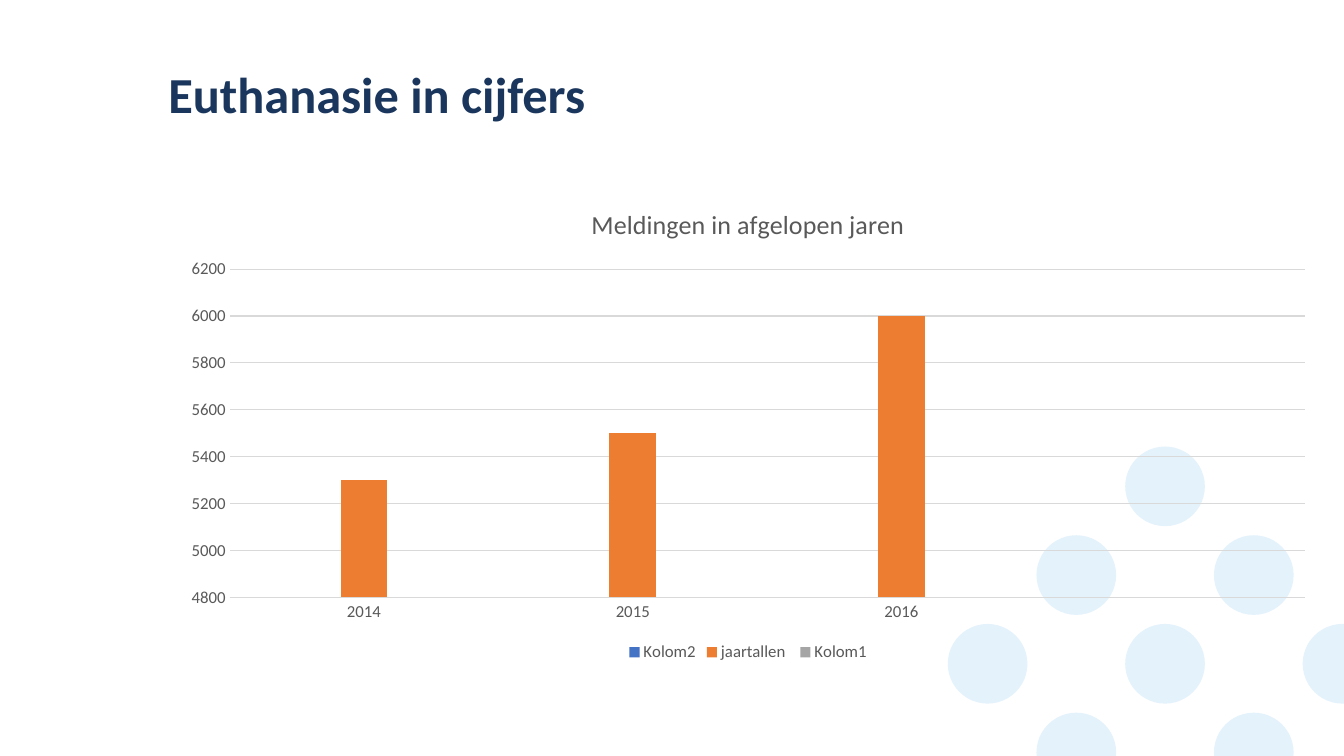
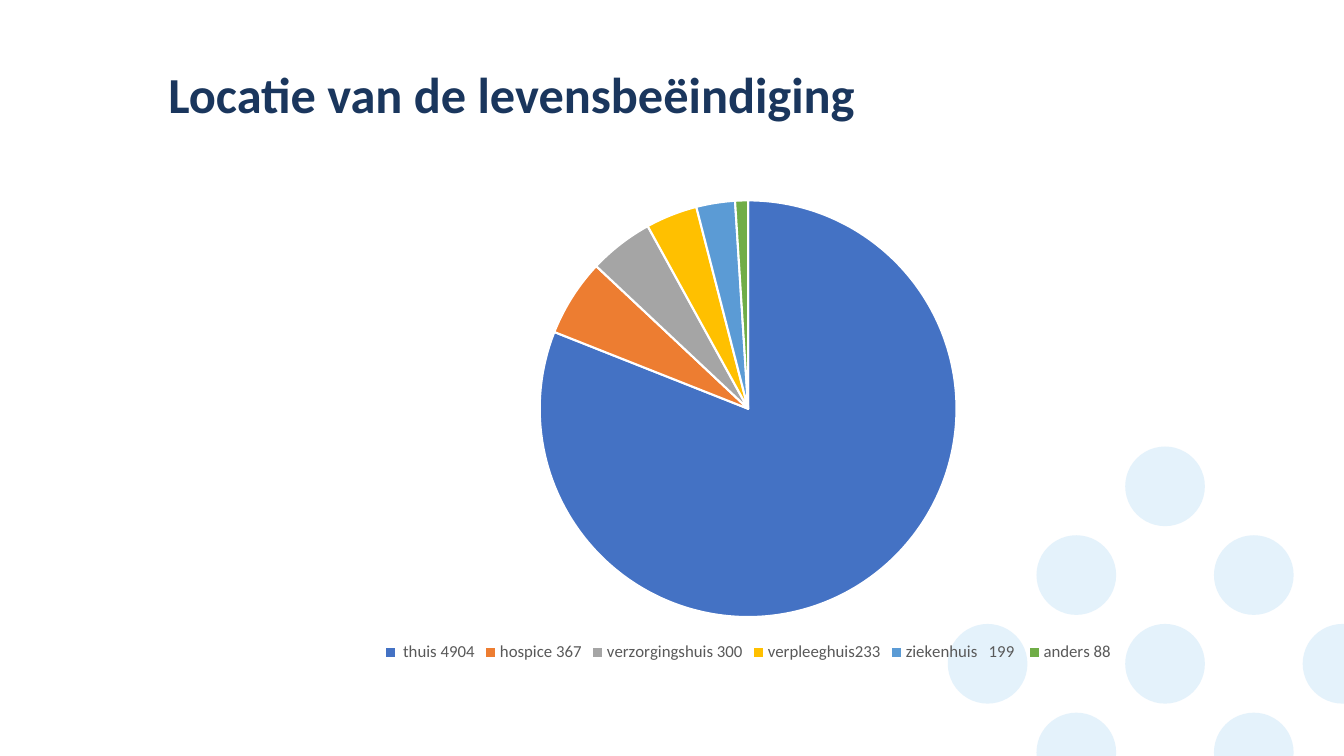
from dataclasses import dataclass
from itertools import product
from typing import Optional

from lxml.etree import SubElement
from pptx import Presentation
from pptx.chart.chart import Chart
from pptx.chart.data import CategoryChartData
from pptx.dml.color import RGBColor
from pptx.enum.chart import XL_CHART_TYPE, XL_LEGEND_POSITION, XL_TICK_MARK
from pptx.enum.shapes import MSO_SHAPE
from pptx.enum.text import MSO_ANCHOR, MSO_AUTO_SIZE, PP_ALIGN
from pptx.oxml.ns import qn
from pptx.slide import Slide, SlideLayout
from pptx.text.text import Font, TextFrame
from pptx.util import Inches, Pt

COLORS = {
    "title": "1A365D",
    "dot": "A8D5F4",
    "label": "595959",
    "grid": "D9D9D9",
    "white": "FFFFFF",
    "blue": "4472C4",
    "orange": "ED7D31",
    "gray": "A5A5A5",
    "yellow": "FFC000",
    "sky": "5B9BD5",
    "green": "70AD47",
}
PALETTE = ("blue", "orange", "gray", "yellow", "sky", "green")
FONT = "Calibri"


@dataclass(frozen=True)
class Box:
    left: float
    top: float
    width: float
    height: float

    def lengths(self) -> tuple:
        return tuple(Inches(value) for value in (self.left, self.top, self.width, self.height))


@dataclass(frozen=True)
class Series:
    name: str
    values: tuple


@dataclass(frozen=True)
class ChartSlide:
    title: str
    chart_type: XL_CHART_TYPE
    categories: tuple
    series: tuple
    chart_title: Optional[str] = None


TITLE_BOX = Box(1.67, 0.69, 11.5, 1.16)
CHART_BOX = Box(1.67, 1.85, 11.5, 4.76)

SLIDES = (
    ChartSlide(
        "Euthanasie in cijfers",
        XL_CHART_TYPE.COLUMN_CLUSTERED,
        ("2014", "2015", "2016", ""),
        (
            Series("Kolom2", (None,) * 4),
            Series("jaartallen ", (5300, 5500, 6000, None)),
            Series("Kolom1", (None,) * 4),
        ),
        "Meldingen in afgelopen jaren",
    ),
    ChartSlide(
        "Locatie van de levensbeëindiging",
        XL_CHART_TYPE.PIE,
        (
            " thuis 4904",
            "hospice 367",
            "verzorgingshuis 300",
            "verpleeghuis233",
            "ziekenhuis   199 ",
            "anders 88",
        ),
        (Series("Series 1", (81, 6, 5, 4, 3, 1)),),
    ),
)


def color(name: str) -> RGBColor:
    return RGBColor.from_string(COLORS[name])


def format_font(font: Font, *, size: float = 12, color_name: str = "label", bold: bool = False) -> None:
    font.name = FONT
    font.size = Pt(size)
    font.bold = bold
    font.color.rgb = color(color_name)


def write_text(frame: TextFrame, text: str, *, line_spacing: Optional[float] = None, **font_format) -> None:
    frame.text = text
    paragraph = frame.paragraphs[0]
    if line_spacing:
        paragraph.line_spacing = line_spacing
    format_font(paragraph.runs[0].font, **font_format)


def add_dots(slide: Slide, layout: SlideLayout) -> None:
    group = slide.shapes.add_group_shape()
    step, diameter = 0.88, Inches(0.79)
    for row, column in product(range(4), range(5)):
        if (row + column) % 2 or abs(column - 2) > row:
            continue
        left, top = Inches(9.4 + step * column), Inches(4.43 + step * row)
        dot = group.shapes.add_shape(MSO_SHAPE.OVAL, left, top, diameter, diameter)
        dot.shadow.inherit = False
        dot.fill.solid()
        dot.fill.fore_color.rgb = color("dot")
        dot.line.fill.background()
        fill_color = dot.element.spPr.find(f"{qn('a:solidFill')}/{qn('a:srgbClr')}")
        SubElement(fill_color, qn("a:alpha")).set("val", "30000")
    for number, properties in enumerate(group.element.iter(qn("p:cNvPr")), start=100):
        properties.set("id", str(number))
    layout.element.cSld.spTree.insert(2, group.element)


def add_title(slide: Slide, text: str) -> None:
    title = slide.shapes.title
    title.left, title.top, title.width, title.height = TITLE_BOX.lengths()
    frame = title.text_frame
    frame.margin_left = frame.margin_top = frame.margin_right = frame.margin_bottom = 0
    frame.vertical_anchor = MSO_ANCHOR.TOP
    frame.word_wrap = True
    frame.auto_size = MSO_AUTO_SIZE.NONE
    write_text(frame, text, line_spacing=0.9, size=36, color_name="title", bold=True)
    frame.paragraphs[0].alignment = PP_ALIGN.LEFT


def format_columns(chart: Chart) -> None:
    plot = chart.plots[0]
    plot.gap_width, plot.overlap = 219, -27
    plot.vary_by_categories = False
    for series, name in zip(plot.series, PALETTE):
        series.format.fill.solid()
        series.format.fill.fore_color.rgb = color(name)
    for axis in (chart.category_axis, chart.value_axis):
        axis.major_tick_mark = axis.minor_tick_mark = XL_TICK_MARK.NONE
        format_font(axis.tick_labels.font)
    value_axis = chart.value_axis
    value_axis.minimum_scale, value_axis.maximum_scale, value_axis.major_unit = 4800, 6200, 200
    value_axis.format.line.fill.background()
    for line in (chart.category_axis.format.line, value_axis.major_gridlines.format.line):
        line.color.rgb = color("grid")
        line.width = Pt(0.75)


def format_pie(chart: Chart) -> None:
    plot = chart.plots[0]
    plot.vary_by_categories = True
    for index, name in enumerate(PALETTE):
        point = plot.series[0].points[index]
        point.format.fill.solid()
        point.format.fill.fore_color.rgb = color(name)
        point.format.line.color.rgb = color("white")
        point.format.line.width = Pt(1.5)


def add_chart(slide: Slide, content: ChartSlide) -> None:
    data = CategoryChartData()
    data.categories = content.categories
    for series in content.series:
        data.add_series(series.name, series.values)
    chart = slide.shapes.add_chart(content.chart_type, *CHART_BOX.lengths(), data).chart
    format_font(chart.font)
    chart.has_legend = True
    chart.legend.position = XL_LEGEND_POSITION.BOTTOM
    chart.legend.include_in_layout = False
    format_font(chart.legend.font)
    chart.has_title = content.chart_title is not None
    if content.chart_title:
        write_text(chart.chart_title.text_frame, content.chart_title, size=18.6)
        chart.chart_title.include_in_layout = False
    if content.chart_type == XL_CHART_TYPE.PIE:
        format_pie(chart)
    else:
        format_columns(chart)


def main() -> None:
    presentation = Presentation()
    presentation.slide_width, presentation.slide_height = Inches(13.33), Inches(7.5)
    layout = presentation.slide_layouts[5]
    for number, content in enumerate(SLIDES):
        slide = presentation.slides.add_slide(layout)
        if number == 0:
            add_dots(slide, layout)
        add_title(slide, content.title)
        add_chart(slide, content)
    presentation.save("out.pptx")


if __name__ == "__main__":
    main()
